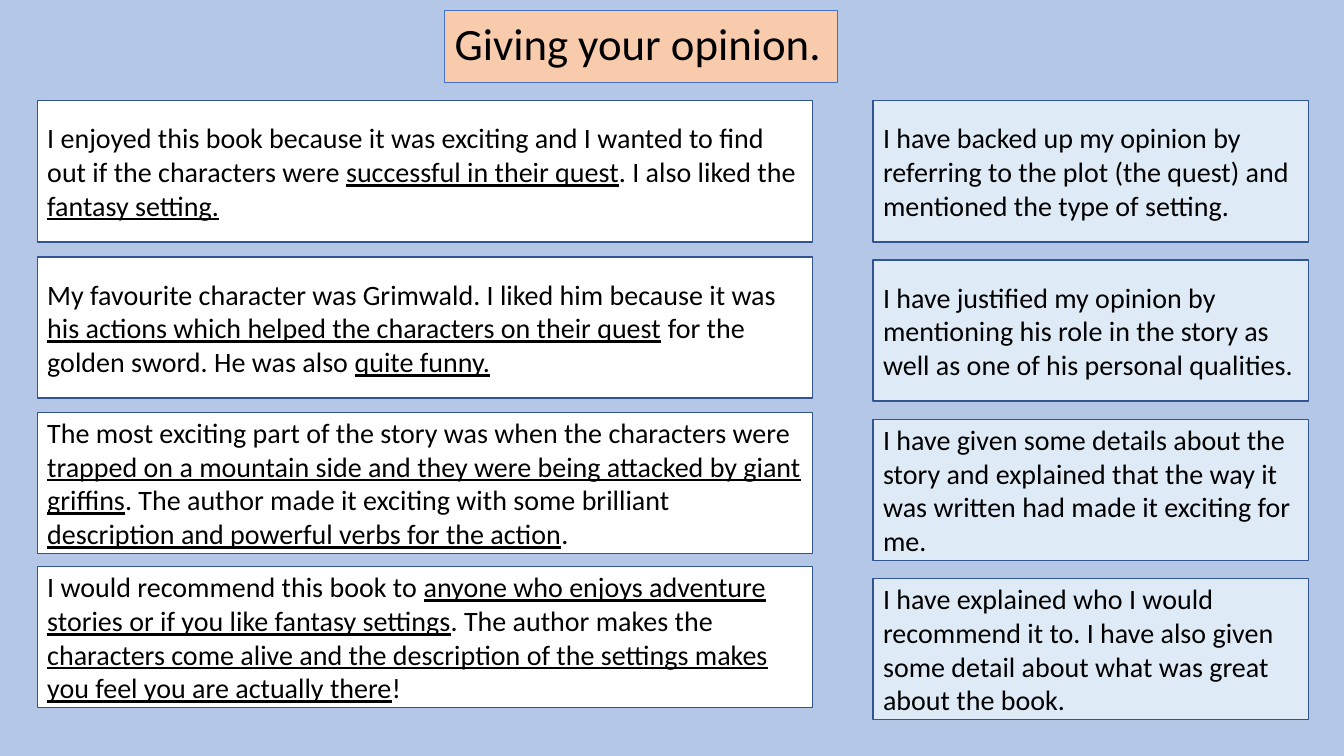
import pptx
import pptx.dml.color
import pptx.enum.shapes
import pptx.enum.text
import pptx.util
from dataclasses import dataclass
from pptx.util import Inches


@dataclass(frozen=True)
class Theme:
    font: str = "Calibri"
    title_size: int = 32
    body_size: int = 20
    background: str = "B4C7E7"
    text: str = "000000"
    title_fill: str = "F8CBAD"
    title_line: str = "4472C4"
    example_fill: str = "FFFFFF"
    comment_fill: str = "DEEBF7"
    box_line: str = "325491"


theme = Theme()


def rgb(value):
    return pptx.dml.color.RGBColor.from_string(value)


def add_box(slide, left, top, width, height, fill, line, line_width, parts, size):
    """Add a filled box; every second text part is underlined."""
    shape = slide.shapes.add_shape(
        pptx.enum.shapes.MSO_SHAPE.RECTANGLE,
        Inches(left), Inches(top), Inches(width), Inches(height))
    shape.shadow.inherit = False
    shape.fill.solid()
    shape.fill.fore_color.rgb = rgb(fill)
    shape.line.color.rgb = rgb(line)
    shape.line.width = pptx.util.Pt(line_width)
    shape.text_frame.word_wrap = True
    shape.text_frame.vertical_anchor = pptx.enum.text.MSO_ANCHOR.MIDDLE
    paragraph = shape.text_frame.paragraphs[0]
    paragraph.alignment = pptx.enum.text.PP_ALIGN.LEFT
    for index, part in enumerate(parts):
        run = paragraph.add_run()
        run.text = part
        run.font.name = theme.font
        run.font.size = pptx.util.Pt(size)
        run.font.color.rgb = rgb(theme.text)
        if index % 2:
            run.font.underline = True
    return shape


presentation = pptx.Presentation()
presentation.slide_width = Inches(13.33)
presentation.slide_height = Inches(7.5)
slide = presentation.slides.add_slide(presentation.slide_layouts[6])
slide.background.fill.solid()
slide.background.fill.fore_color.rgb = rgb(theme.background)

title = add_box(slide, 4.41, 0.1, 3.9, 0.72, theme.title_fill, theme.title_line,
                0.75, ["Giving your opinion."], theme.title_size)
title.text_frame.paragraphs[0].line_spacing = 0.9

examples = [
    ["I enjoyed this book because it was exciting and I wanted to find out if the characters were ",
     "successful in their quest", ". I also liked the ", "fantasy setting."],
    ["My favourite character was Grimwald. I liked him because it was ",
     "his actions which helped the characters on their quest",
     " for the golden sword. He was also ", "quite funny."],
    ["The most exciting part of the story was when the characters were ",
     "trapped on a mountain side and they were being attacked by giant griffins",
     ". The author made it exciting with some brilliant ",
     "description and powerful verbs for the action", "."],
    ["I would recommend this book to ",
     "anyone who enjoys adventure stories or if you like fantasy settings",
     ". The author makes the ",
     "characters come alive and the description of the settings makes you feel you are actually there",
     "!"],
]
comments = [
    ["I have backed up my opinion by referring to the plot (the quest) and mentioned the type of setting."],
    ["I have justified my opinion by mentioning his role in the story as well as one of his personal qualities."],
    ["I have given some details about the story and explained that the way it was written had made it exciting for me."],
    ["I have explained who I would recommend it to. I have also given some detail about what was great about the book."],
]

# Each column: left, width, box tops, fill, texts
columns = [
    (0.37, 7.69, [1, 2.55, 4.09, 5.62], theme.example_fill, examples),
    (8.66, 4.32, [1, 2.58, 4.16, 5.74], theme.comment_fill, comments),
]
for left, width, tops, fill, texts in columns:
    for top, parts in zip(tops, texts):
        add_box(slide, left, top, width, 1.4, fill, theme.box_line,
                1, parts, theme.body_size)

presentation.save("out.pptx")
